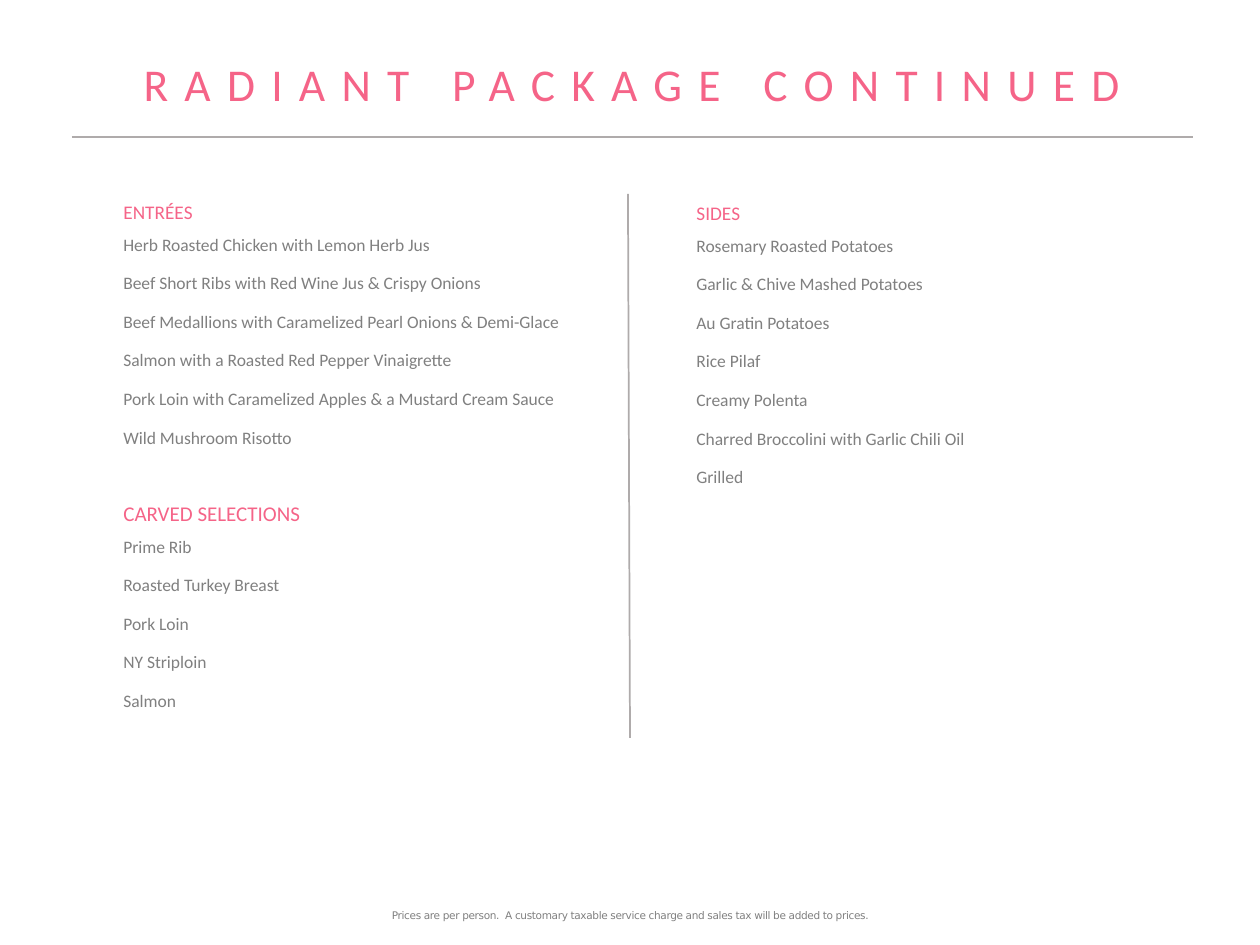
"""Build the Radiant package menu slide with entrées, carved selections and sides."""
from lxml.etree import SubElement
from pptx import Presentation
from pptx.dml.color import RGBColor
from pptx.enum.shapes import MSO_CONNECTOR
from pptx.enum.text import PP_ALIGN
from pptx.oxml.ns import qn
from pptx.util import Emu, Pt

PX = 914400 / 126
PINK, GRAY, RULE = "F56488", "808080", "AFABAB"


def color(target, value):
    target.rgb = RGBColor.from_string(value)


def write(frame, text, size=10, fill=GRAY, font="Calibri", tracking=0,
          align=PP_ALIGN.LEFT, leading=1, before=0, after=0):
    paragraph = frame.paragraphs[0]
    if paragraph.runs:
        paragraph = frame.add_paragraph()
    paragraph.alignment = align
    paragraph.line_spacing = leading
    paragraph.space_before, paragraph.space_after = Pt(before), Pt(after)
    run = paragraph.add_run()
    run.text = text
    run.font.size, run.font.name = Pt(size), font
    color(run.font.color, fill)
    if tracking:
        run._r.get_or_add_rPr().set("spc", str(tracking))


prs = Presentation()
prs.slide_width, prs.slide_height = Emu(round(1260 * PX)), Emu(round(945 * PX))
slide = prs.slides.add_slide(prs.slide_layouts[6])

frames = {}
for part, box in {
    "footer": (0, 908, 1260, 15),
    "title": (4, 48, 1256, 69),
    "mains": (111, 194, 490, 736),
    "sides": (684, 195, 437, 415),
}.items():
    frame = slide.shapes.add_textbox(*(Emu(round(v * PX)) for v in box)).text_frame
    frame.word_wrap = True
    frames[part] = frame

footer = frames["footer"]
footer.margin_left = footer.margin_right = footer.margin_bottom = 0
footer.margin_top = Emu(round(PX))
write(footer, "Prices are per person.  A customary taxable service charge and sales tax will be added to prices.",
      size=6, font="DejaVu Sans", tracking=-20, align=PP_ALIGN.CENTER, before=1)

title = frames["title"]
title.margin_left = title.margin_right = Emu(round(14 * PX))
title.margin_top = title.margin_bottom = Emu(round(8 * PX))
write(title, "RADIANT PACKAGE CONTINUED", size=26, fill=PINK, tracking=930, align=PP_ALIGN.CENTER)

courses = [
    ("mains", "ENTRÉES", 11, 0, [
        "Herb Roasted Chicken with Lemon Herb Jus",
        "Beef Short Ribs with Red Wine Jus & Crispy Onions",
        "Beef Medallions with Caramelized Pearl Onions & Demi-Glace",
        "Salmon with a Roasted Red Pepper Vinaigrette",
        "Pork Loin with Caramelized Apples & a Mustard Cream Sauce",
        "Wild Mushroom Risotto",
    ]),
    ("mains", "CARVED SELECTIONS", 12, 26, [
        "Prime Rib", "Roasted Turkey Breast", "Pork Loin", "NY Striploin", "Salmon",
    ]),
    ("sides", "SIDES", 11, 0, [
        "Rosemary Roasted Potatoes",
        "Garlic & Chive Mashed Potatoes",
        "Au Gratin Potatoes",
        "Rice Pilaf",
        "Creamy Polenta",
        "Charred Broccolini with Garlic Chili Oil",
        "Grilled",
    ]),
]
for column, heading, size, gap, dishes in courses:
    write(frames[column], heading, size=size, fill=PINK, before=gap)
    for dish in dishes:
        write(frames[column], dish, leading=1.5, after=4)

for ends in [(72, 137, 1193, 137), (628, 194, 630, 738)]:
    divider = slide.shapes.add_connector(MSO_CONNECTOR.STRAIGHT, *(Emu(round(v * PX)) for v in ends))
    divider.line.width = Pt(1)
    color(divider.line.color, RULE)
    SubElement(divider._element.spPr, qn("a:effectLst"))

prs.save("out.pptx")
